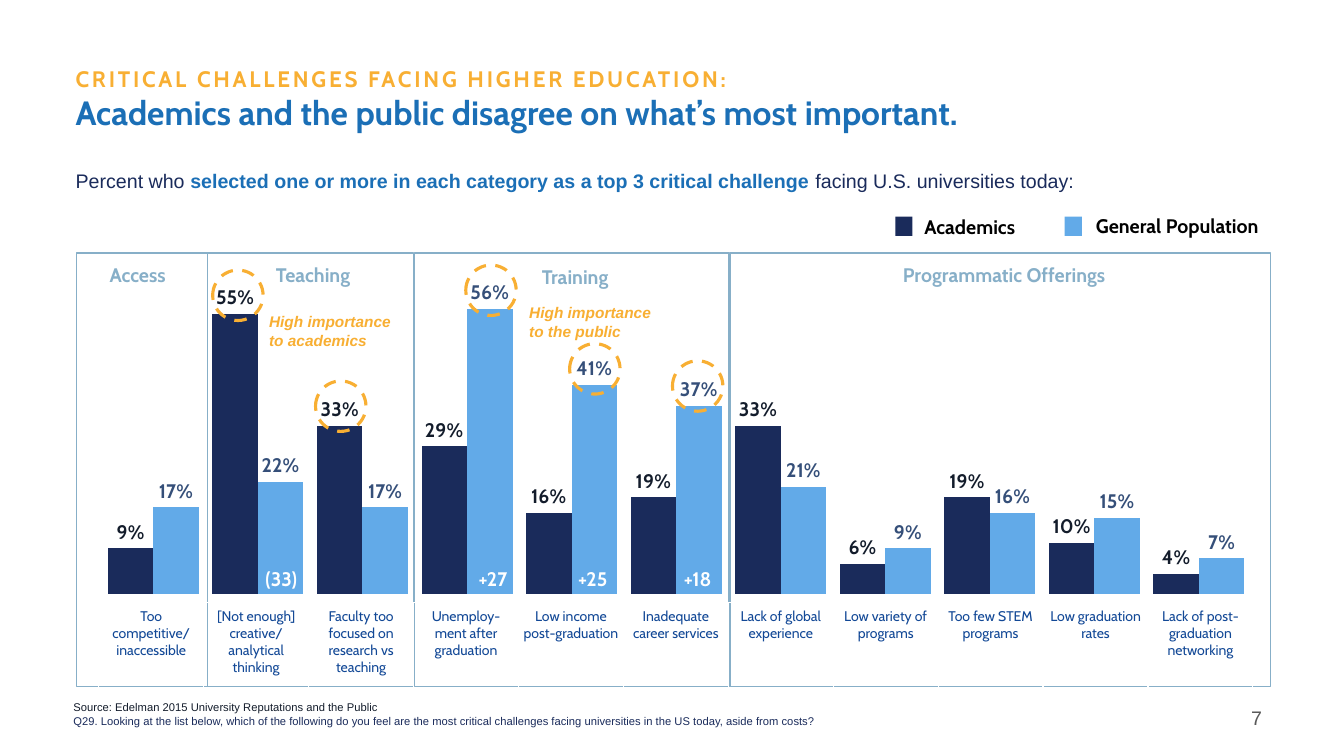
"""Build the slide on critical challenges facing higher education."""
from dataclasses import dataclass
from lxml.etree import SubElement as Sub
from pptx import Presentation
from pptx.chart.data import CategoryChartData as Data
from pptx.dml.color import RGBColor as Rgb
from pptx.enum.chart import XL_CHART_TYPE as Kind, XL_LABEL_POSITION as Spot
from pptx.enum.dml import MSO_LINE as Dash
from pptx.enum.shapes import MSO_SHAPE as Form
from pptx.enum.text import MSO_ANCHOR as Anchor, PP_ALIGN as Align
from pptx.oxml.ns import qn
from pptx.util import Inches, Pt


@dataclass(frozen=True)
class Theme:
    navy: str = "1A2B5B"
    sky: str = "62AAE8"
    blue: str = "1B6FB6"
    slate: str = "354F79"
    steel: str = "87AFC8"
    gold: str = "F8AF33"
    ink: str = "131C2B"
    label: str = "124896"
    gray: str = "595959"
    white: str = "FFFFFF"
    black: str = "000000"
    head: str = "Cabin"
    body: str = "Arial"
    title: int = 24
    kicker: int = 16
    main: int = 14
    note: int = 11
    small: int = 10
    foot: int = 8


T = Theme()

ITEMS = [
    ("Too competitive/ inaccessible", 0.09, 0.17),
    ("[Not enough] creative/ analytical thinking", 0.55, 0.22),
    ("Faculty too focused on research vs teaching", 0.33, 0.17),
    ("Unemploy-ment after graduation", 0.29, 0.56),
    ("Low income post-graduation", 0.16, 0.41),
    ("Inadequate career services", 0.19, 0.37),
    ("Lack of global experience", 0.33, 0.21),
    ("Low variety of programs", 0.06, 0.09),
    ("Too few STEM programs", 0.19, 0.16),
    ("Low graduation rates", 0.10, 0.15),
    ("Lack of post-graduation networking", 0.04, 0.07),
]
SERIES = [("Academics", T.navy, T.ink), ("General Population", T.sky, T.slate)]
PANELS = [
    ("Access", 0.76, 1.3, 0.82, 2.56, 1.09),
    ("Teaching", 2.06, 2.04, 2.21, 2.56, 1.79),
    ("Training", 4.11, 3.12, 4.12, 2.58, 3.17),
    ("Programmatic Offerings", 7.24, 5.36, 7.29, 2.56, 5.34),
]
GAPS = [("(33)", 2.57), ("+27", 4.67), ("+25", 5.66), ("+18", 6.7)]
RINGS = [(2.11, 2.68), (3.13, 3.78), (4.62, 2.63), (5.65, 3.41), (6.67, 3.58)]
KEYS = [(8.88, 9.07, 2.08, 1.23), (10.56, 10.77, 2.07, 2.11)]
NOTES = [
    ("High importance to academics", 2.57, 3.05, 1.49),
    ("High importance to the public", 5.15, 2.96, 1.52),
]
TITLE = [
    [("CRITICAL CHALLENGES FACING HIGHER EDUCATION:",
      dict(size=T.kicker, color=T.gold, track=200)),
     ("\n", {}),
     ("Academics and the public disagree on what’s most important.", {})],
]
LEAD = [
    [("Percent who ", {}),
     ("selected one or more in each category as a top 3 critical challenge ",
      dict(color=T.blue, bold=True)),
     ("facing U.S. universities today:", {})],
]
SOURCE = [
    [("Source: Edelman 2015 University Reputations and the Public", dict(color=T.ink))],
    [("Q29. Looking at the list below, which of the following do you feel are the most "
      "critical challenges facing universities in the US today, aside from costs?", {})],
]


def style(font, size=T.main, color=T.navy, face=T.head, bold=False, italic=False):
    font.size, font.name = Pt(size), face
    font.bold, font.italic = bold, italic
    font.color.rgb = Rgb.from_string(color)


def write(frame, text, align=Align.LEFT, pad=None, anchor=Anchor.TOP, **look):
    frame.word_wrap = True
    frame.vertical_anchor = anchor
    if pad is not None:
        frame.margin_left = frame.margin_right = Inches(pad)
        frame.margin_top = frame.margin_bottom = Inches(pad)
    paras = [[(text, {})]] if isinstance(text, str) else text
    for i, runs in enumerate(paras):
        para = frame.add_paragraph() if i else frame.paragraphs[0]
        para.alignment = align
        for words, extra in runs:
            if words == "\n":
                para.add_line_break()
                continue
            run = para.add_run()
            run.text = words
            mix = {**look, **extra}
            track = mix.pop("track", 0)
            style(run.font, **mix)
            if track:
                run.font._element.set("spc", str(track))


def place(slide, box, text, **look):
    write(slide.shapes.add_textbox(*map(Inches, box)).text_frame, text, **look)


def draw(slide, form, box, fill=None, line=None, width=1, dash=None):
    shape = slide.shapes.add_shape(form, *map(Inches, box))
    shape.shadow.inherit = False
    if fill:
        shape.fill.solid()
        shape.fill.fore_color.rgb = Rgb.from_string(fill)
    else:
        shape.fill.background()
    if line:
        shape.line.color.rgb = Rgb.from_string(line)
        shape.line.width = Pt(width)
        shape.line.dash_style = dash
    else:
        shape.line.fill.background()


def plot(slide):
    data = Data(number_format="0%")
    data.categories = [str(i + 1) for i in range(len(ITEMS))]
    for i, (name, _, _) in enumerate(SERIES):
        data.add_series(name, [item[i + 1] for item in ITEMS])
    box = map(Inches, (0.77, 2.62, 11.64, 4.2))
    chart = slide.shapes.add_chart(Kind.COLUMN_CLUSTERED, *box, data).chart
    chart.has_legend = chart.has_title = False
    style(chart.font, T.small, T.ink, T.body)
    axis = chart.value_axis
    axis.minimum_scale, axis.maximum_scale = 0, 0.6
    axis.has_major_gridlines = False
    axis.visible = chart.category_axis.visible = False
    bars = chart.plots[0]
    bars.gap_width, bars.overlap, bars.vary_by_categories = 30, 0, False
    for series, (_, fill, ink) in zip(bars.series, SERIES):
        series.format.fill.solid()
        series.format.fill.fore_color.rgb = Rgb.from_string(fill)
        tags = series.data_labels
        tags.show_value, tags.position = True, Spot.OUTSIDE_END
        tags.number_format, tags.number_format_is_linked = "0%", False
        style(tags.font, color=ink, bold=True)
    area = chart._chartSpace.chart.plotArea
    for old in area.findall(qn("c:layout")):
        area.remove(old)
    layout = Sub(area, qn("c:layout"))
    area.insert(0, layout)
    inner = Sub(layout, qn("c:manualLayout"))
    for tag, val in [("layoutTarget", "inner"), ("xMode", "edge"), ("yMode", "edge"),
                     ("x", 0.02), ("y", 0.057), ("w", 0.98), ("h", 0.723)]:
        Sub(inner, qn("c:" + tag)).set("val", str(val))


def tabulate(slide):
    box = map(Inches, (0.98, 5.98, 11.45, 0.96))
    table = slide.shapes.add_table(1, len(ITEMS), *box).table
    table.first_row = table.horz_banding = False
    for i, (text, _, _) in enumerate(ITEMS):
        table.columns[i].width = Inches(11.45 / len(ITEMS))
        cell = table.cell(0, i)
        cell.margin_left = cell.margin_right = Inches(0.05)
        write(cell.text_frame, text, align=Align.CENTER, size=T.small, color=T.label)
        props = cell._tc.get_or_add_tcPr()
        for side in ("lnL", "lnR", "lnT", "lnB"):
            edge = Sub(props, qn("a:" + side), w=str(Pt(1)))
            Sub(Sub(edge, qn("a:solidFill")), qn("a:srgbClr"), val=T.white)
        cell.fill.background()


def main():
    deck = Presentation()
    deck.slide_width, deck.slide_height = Inches(13.33), Inches(7.5)
    slide = deck.slides.add_slide(deck.slide_layouts[6])
    plot(slide)
    place(slide, (0.75, 0.57, 11.92, 0.74), TITLE, pad=0, anchor=Anchor.BOTTOM,
          size=T.title, color=T.blue, bold=True)
    place(slide, (0.75, 1.68, 11.97, 0.35), LEAD, pad=0, face=T.body)
    for name, left, width, x, y, wide in PANELS:
        draw(slide, Form.RECTANGLE, (left, 2.51, width, 4.3), line=T.steel)
        place(slide, (x, y, wide, 0.34), name, align=Align.CENTER,
              color=T.steel, bold=True)
    for text, x in GAPS:
        place(slide, (x, 5.62, 0.44, 0.24), text, align=Align.CENTER, pad=0,
              color=T.white, bold=True)
    for x, y in RINGS:
        draw(slide, Form.OVAL, (x, y, 0.5, 0.5), line=T.gold, width=2.25, dash=Dash.DASH)
    tabulate(slide)
    for (name, fill, _), (left, x, y, wide) in zip(SERIES, KEYS):
        draw(slide, Form.RECTANGLE, (left, 2.15, 0.17, 0.19), fill=fill)
        place(slide, (x, y, wide, 0.34), name, color=T.black, bold=True)
    place(slide, (0.63, 6.9, 7.83, 0.37), SOURCE, size=T.foot, face=T.body)
    place(slide, (12.31, 6.95, 0.78, 0.4), "7", color=T.gray, face=T.body)
    for text, x, y, wide in NOTES:
        place(slide, (x, y, wide, 0.47), text, size=T.note, color=T.gold,
              face=T.body, bold=True, italic=True)
    deck.save("out.pptx")


if __name__ == "__main__":
    main()
